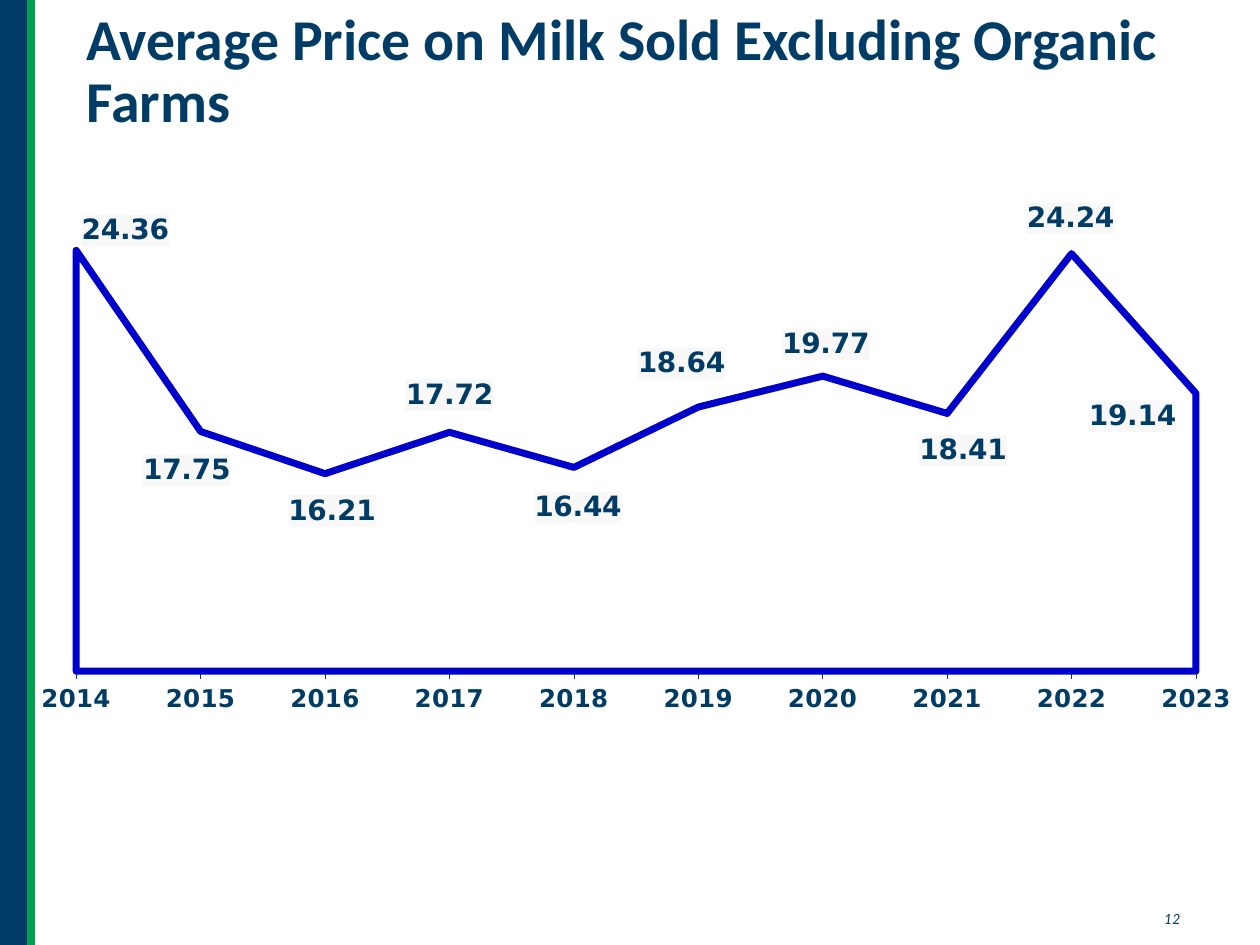
from lxml import etree
from pptx import Presentation
from pptx.chart.data import CategoryChartData
from pptx.dml.color import RGBColor
from pptx.enum.chart import XL_CHART_TYPE, XL_TICK_LABEL_POSITION, XL_TICK_MARK
from pptx.enum.shapes import MSO_CONNECTOR, MSO_SHAPE
from pptx.enum.text import MSO_ANCHOR
from pptx.oxml import parse_xml
from pptx.oxml.ns import nsdecls, qn
from pptx.util import Cm, Pt

NAVY = RGBColor(0x00, 0x3C, 0x66)
GREEN = RGBColor(0x00, 0x9F, 0x4D)
BLUE = RGBColor(0x00, 0x00, 0xCC)
WHITE = RGBColor(0xFF, 0xFF, 0xFF)
LABEL_GREY = RGBColor(0xF8, 0xF8, 0xF8)
CHART_FONT = "DejaVu Sans"
PRICE_MIN, PRICE_MAX = 9, 27
PLOT = {"x": 0.083, "y": 0.066, "w": 0.873, "h": 0.729}

# Year, price, and how far the label centre lies from its point in cm (x, y)
PRICES = [
    ("2014", 24.36, 0.99, -0.4),
    ("2015", 17.75, -0.28, 0.79),
    ("2016", 16.21, 0.14, 0.75),
    ("2017", 17.72, 0, -0.75),
    ("2018", 16.44, 0.08, 0.81),
    ("2019", 18.64, -0.34, -0.88),
    ("2020", 19.77, 0.06, -0.64),
    ("2021", 18.41, 0.32, 0.75),
    ("2022", 24.24, -0.02, -0.71),
    ("2023", 19.14, -1.28, 0.46),
]


def style_font(font, size, name, bold=False, italic=False):
    font.size = Pt(size)
    font.name = name
    font.bold = bold
    font.italic = italic
    font.color.rgb = NAVY


def add_text(slide, box, text, *, size, font, bold=False, italic=False,
             anchor=MSO_ANCHOR.TOP, spacing=1.0, fill=None):
    sp = slide.shapes.add_textbox(*map(Cm, box))
    if fill is not None:
        sp.fill.solid()
        sp.fill.fore_color.rgb = fill
    tf = sp.text_frame
    tf.word_wrap = True
    tf.vertical_anchor = anchor
    p = tf.paragraphs[0]
    p.line_spacing = spacing
    r = p.add_run()
    r.text = text
    style_font(r.font, size, font, bold, italic)


def add_side_band(slide, box):
    """Navy band with a green line along its right edge."""
    x, y, w, h = box
    sp = slide.shapes.add_shape(MSO_SHAPE.RECTANGLE, *map(Cm, box))
    sp.shadow.inherit = False
    sp.fill.solid()
    sp.fill.fore_color.rgb = NAVY
    sp.line.fill.background()
    line = slide.shapes.add_connector(
        MSO_CONNECTOR.STRAIGHT, Cm(x + w), Cm(y), Cm(x + w), Cm(y + h))
    line.line.color.rgb = GREEN
    line.line.width = Pt(4.5)
    etree.SubElement(line._element.spPr, qn("a:effectLst"))


def manual_layout(**values):
    parts = "".join(f'<c:{k} val="{v}"/>' for k, v in values.items())
    return parse_xml(f'<c:layout {nsdecls("c")}><c:manualLayout>{parts}'
                     '</c:manualLayout></c:layout>')


def place_plot(chart):
    plot_area = chart._chartSpace.chart.plotArea
    for old in plot_area.findall(qn("c:layout")):
        plot_area.remove(old)
    plot_area.insert(0, manual_layout(
        layoutTarget="inner", xMode="edge", yMode="edge", **PLOT))


def style_axes(chart):
    years = chart.category_axis
    years.has_major_gridlines = False
    years.major_tick_mark = XL_TICK_MARK.OUTSIDE
    years.minor_tick_mark = XL_TICK_MARK.NONE
    years.tick_label_position = XL_TICK_LABEL_POSITION.LOW
    years.format.line.color.rgb = NAVY
    years.format.line.width = Pt(0.25)
    style_font(years.tick_labels.font, 14, CHART_FONT, bold=True)
    prices = chart.value_axis
    prices.minimum_scale, prices.maximum_scale = PRICE_MIN, PRICE_MAX
    prices.has_major_gridlines = False
    prices.visible = False
    # The first and last years sit on the plot edges
    prices._element.find(qn("c:crossBetween")).set("val", "midCat")


def fill_label(label):
    for old in label.findall(qn("c:spPr")):
        label.remove(old)
    label.find(qn("c:txPr")).addprevious(parse_xml(
        f'<c:spPr {nsdecls("c", "a")}><a:solidFill>'
        f'<a:srgbClr val="{LABEL_GREY}"/></a:solidFill></c:spPr>'))


def style_labels(series, w, h):
    """Area labels start halfway up the area, so lift each to its point."""
    labels = series.data_labels
    labels.show_value = True
    labels.number_format = "0.00"
    labels.number_format_is_linked = False
    style_font(labels.font, 16, CHART_FONT, bold=True)
    fill_label(labels._element)
    for leader in labels._element.findall(qn("c:showLeaderLines")):
        leader.set("val", "0")
    for i in range(len(PRICES)):
        style_font(series.points[i].data_label.font, 16, CHART_FONT, bold=True)
    for label, (_, price, dx, dy) in zip(
            labels._element.findall(qn("c:dLbl")), PRICES):
        lift = PLOT["h"] * (price - PRICE_MIN) / (PRICE_MAX - PRICE_MIN) / 2
        label.insert(1, manual_layout(x=dx / w, y=dy / h - lift))
        fill_label(label)


def add_price_chart(slide, box):
    data = CategoryChartData(number_format="0.00")
    data.categories = [row[0] for row in PRICES]
    data.add_series("Series 1", [row[1] for row in PRICES])
    chart = slide.shapes.add_chart(
        XL_CHART_TYPE.AREA_STACKED, *map(Cm, box), data).chart
    chart.has_legend = False
    chart.has_title = False
    style_font(chart.font, 18, CHART_FONT, bold=True)
    chart.plots[0].vary_by_categories = False
    place_plot(chart)
    style_axes(chart)
    series = chart.plots[0].series[0]
    series.format.fill.background()
    series.format.line.color.rgb = BLUE
    series.format.line.width = Pt(4)
    style_labels(series, box[2], box[3])


def main():
    prs = Presentation()
    prs.slide_width, prs.slide_height = Cm(25.4), Cm(19.05)
    s = prs.slides.add_slide(prs.slide_layouts[6])
    add_text(s, (23.22, 18.24, 1.14, 0.61), "12",
             size=8, font="Lato", italic=True)
    add_side_band(s, (0, 0, 0.63, 19.05))
    add_text(s, (1.49, 0, 23.91, 2.94),
             "Average Price on Milk Sold Excluding Organic Farms",
             size=33, font="Calibri", bold=True,
             anchor=MSO_ANCHOR.MIDDLE, spacing=0.9, fill=WHITE)
    add_price_chart(s, (-0.61, 2.69, 25.86, 13.64))
    prs.save("out.pptx")


if __name__ == "__main__":
    main()
